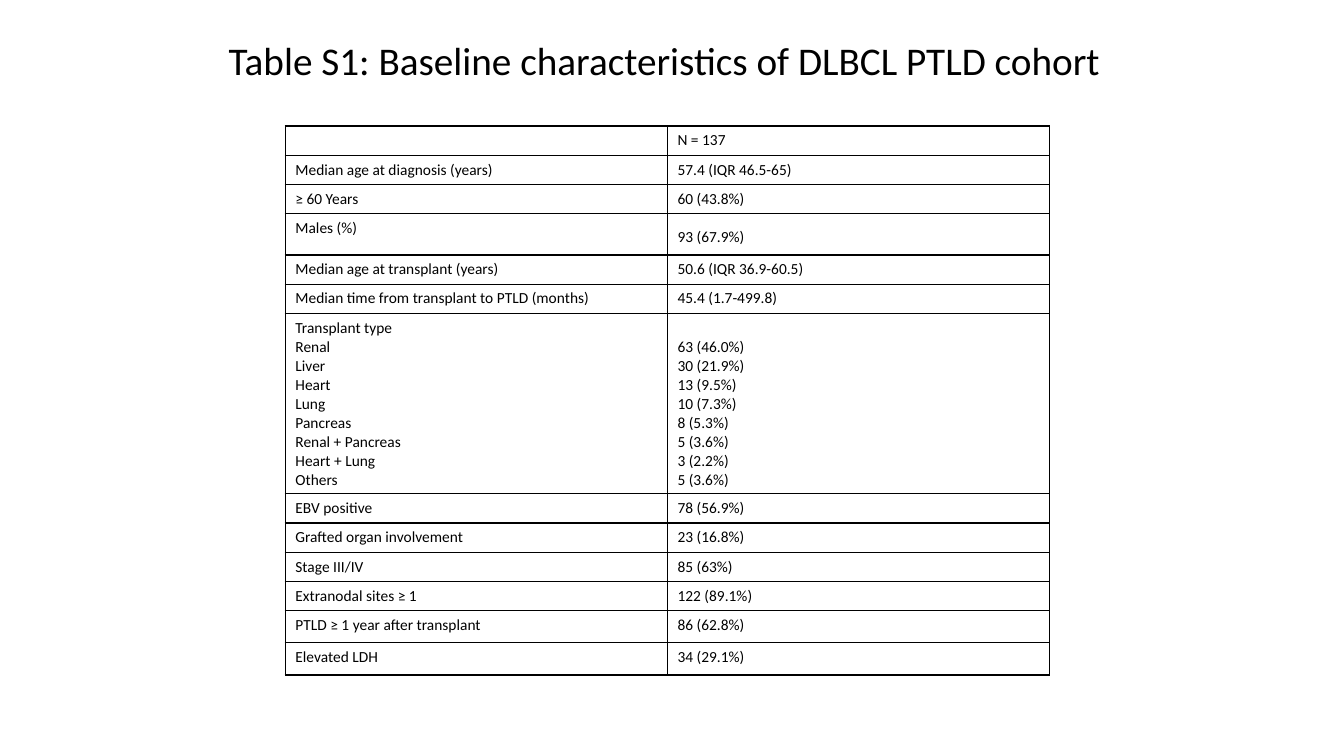
from lxml.etree import SubElement
from pptx import Presentation
from pptx.dml.color import RGBColor
from pptx.enum.text import MSO_ANCHOR, PP_ALIGN
from pptx.oxml.ns import qn
from pptx.util import Inches, Pt

FONT = "Calibri"
BLACK = "000000"
BODY_SIZE = 11
ROW_HEIGHT = 0.29
CELL_MARGIN = 0.05

# Label lines, value lines, row height, extra space above the value
ROWS = [
    ([], ["N = 137"], ROW_HEIGHT, 0),
    (["Median age at diagnosis (years)"], ["57.4 (IQR 46.5-65)"], ROW_HEIGHT, 0),
    (["≥ 60 Years"], ["60 (43.8%)"], ROW_HEIGHT, 0),
    (["Males (%)"], ["93 (67.9%)"], 0.41, 0.09),
    (["Median age at transplant (years)"], ["50.6 (IQR 36.9-60.5)"], ROW_HEIGHT, 0),
    (["Median time from transplant to PTLD (months)"], ["45.4 (1.7-499.8)"],
     ROW_HEIGHT, 0),
    (["Transplant type", "Renal", "Liver", "Heart", "Lung", "Pancreas",
      "Renal + Pancreas", "Heart + Lung", "Others"],
     ["63 (46.0%)", "30 (21.9%)", "13 (9.5%)", "10 (7.3%)", "8 (5.3%)",
      "5 (3.6%)", "3 (2.2%)", "5 (3.6%)"], 1.79, 0.19),
    (["EBV positive"], ["78 (56.9%)"], ROW_HEIGHT, 0),
    (["Grafted organ involvement"], ["23 (16.8%)"], ROW_HEIGHT, 0),
    (["Stage III/IV"], ["85 (63%)"], ROW_HEIGHT, 0),
    (["Extranodal sites ≥ 1"], ["122 (89.1%)"], ROW_HEIGHT, 0),
    (["PTLD ≥ 1 year after transplant"], ["86 (62.8%)"], 0.32, 0),
    (["Elevated LDH"], ["34 (29.1%)"], 0.32, 0),
]


def color(hex_code):
    return RGBColor.from_string(hex_code)


def add_run(paragraph, text, size):
    run = paragraph.add_run()
    run.text = text
    run.font.name = FONT
    run.font.size = Pt(size)
    run.font.color.rgb = color(BLACK)


def add_title(slide, text):
    box = slide.shapes.add_textbox(Inches(2.17), Inches(0), Inches(9), Inches(1.25))
    frame = box.text_frame
    frame.word_wrap = True
    frame.vertical_anchor = MSO_ANCHOR.MIDDLE
    paragraph = frame.paragraphs[0]
    paragraph.alignment = PP_ALIGN.LEFT
    paragraph.line_spacing = 0.9
    add_run(paragraph, text, 28)


def set_borders(cell):
    properties = cell._tc.get_or_add_tcPr()
    for index, side in enumerate(("lnL", "lnR", "lnT", "lnB")):
        line = properties.makeelement(qn(f"a:{side}"), {"w": str(Pt(1))})
        fill = SubElement(line, qn("a:solidFill"))
        SubElement(fill, qn("a:srgbClr"), val=BLACK)
        properties.insert(index, line)


def fill_cell(cell, lines, space_above=0):
    cell.fill.background()
    cell.margin_top = Inches(CELL_MARGIN + space_above)
    cell.margin_bottom = Inches(CELL_MARGIN)
    cell.vertical_anchor = MSO_ANCHOR.TOP
    set_borders(cell)
    frame = cell.text_frame
    for index, text in enumerate(lines):
        paragraph = frame.add_paragraph() if index else frame.paragraphs[0]
        add_run(paragraph, text, BODY_SIZE)
    if not lines:
        # An empty cell keeps the body size, so its row stays low
        SubElement(frame.paragraphs[0]._p, qn("a:endParaRPr"),
                   sz=str(BODY_SIZE * 100))


def add_characteristics_table(slide, rows):
    height = sum(row[2] for row in rows)
    frame = slide.shapes.add_table(len(rows), 2, Inches(2.83), Inches(1.25),
                                   Inches(7.58), Inches(height))
    table = frame.table
    table.first_row = False
    table.horz_banding = False
    for column in table.columns:
        column.width = Inches(3.79)
    for index, (labels, values, row_height, space_above) in enumerate(rows):
        table.rows[index].height = Inches(row_height)
        fill_cell(table.cell(index, 0), labels)
        fill_cell(table.cell(index, 1), values, space_above)


def main():
    presentation = Presentation()
    presentation.slide_width = Inches(13.33)
    presentation.slide_height = Inches(7.5)
    slide = presentation.slides.add_slide(presentation.slide_layouts[6])

    add_title(slide, "Table S1: Baseline characteristics of DLBCL PTLD cohort")
    add_characteristics_table(slide, ROWS)

    presentation.save("out.pptx")


if __name__ == "__main__":
    main()
